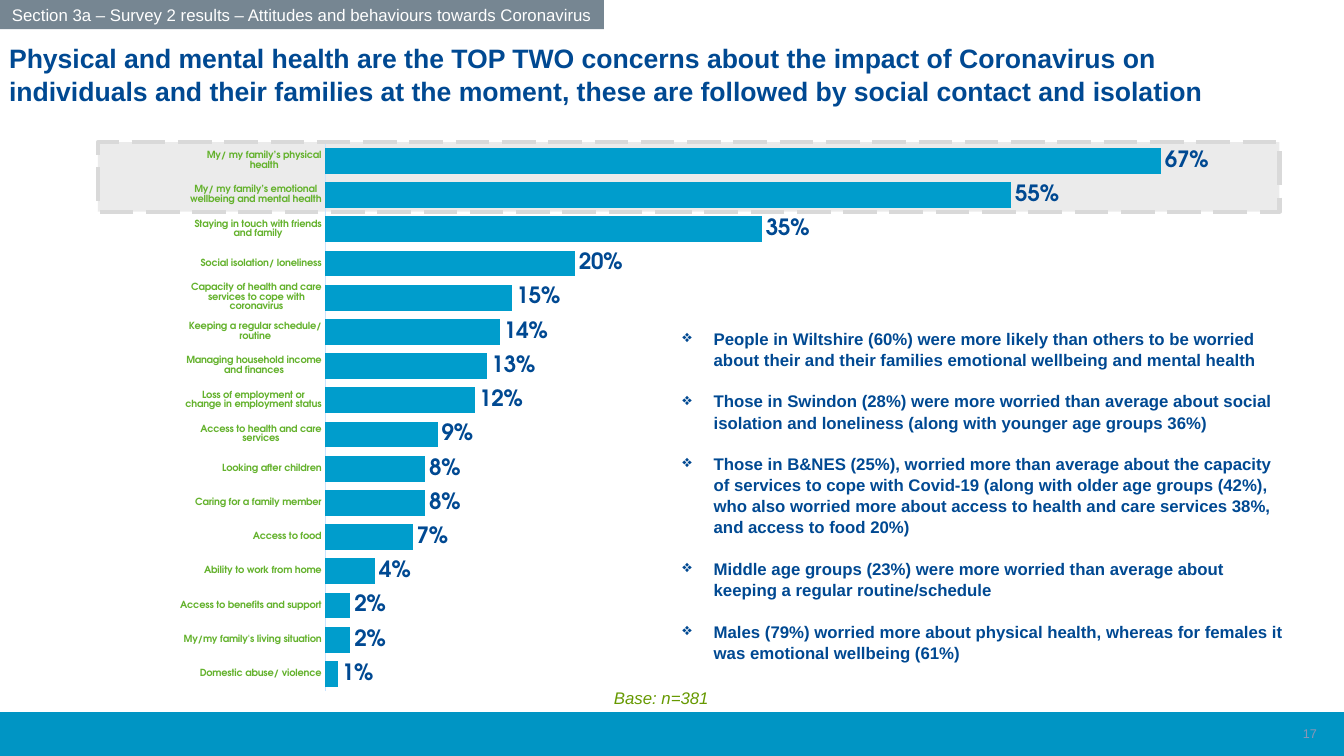
from lxml import etree
from pptx import Presentation
from pptx.chart.data import CategoryChartData
from pptx.dml.color import RGBColor
from pptx.enum.chart import XL_CHART_TYPE, XL_LABEL_POSITION, XL_TICK_MARK
from pptx.enum.dml import MSO_LINE
from pptx.enum.shapes import MSO_SHAPE
from pptx.enum.text import MSO_ANCHOR, MSO_AUTO_SIZE, PP_ALIGN
from pptx.oxml.ns import qn
from pptx.util import Inches, Pt

RECTANGLE = MSO_SHAPE.RECTANGLE
LONG_DASH = MSO_LINE.LONG_DASH
BAR_CLUSTERED = XL_CHART_TYPE.BAR_CLUSTERED
OUTSIDE_END = XL_LABEL_POSITION.OUTSIDE_END
NO_TICK = XL_TICK_MARK.NONE
TOP, MIDDLE = MSO_ANCHOR.TOP, MSO_ANCHOR.MIDDLE
LEFT, CENTER, RIGHT = PP_ALIGN.LEFT, PP_ALIGN.CENTER, PP_ALIGN.RIGHT
NO_AUTOFIT = MSO_AUTO_SIZE.NONE

NAVY = RGBColor(0x00, 0x49, 0x92)
BAR_BLUE = RGBColor(0x00, 0x9D, 0xCC)
FOOTER_BLUE = RGBColor(0x00, 0x95, 0xC4)
AXIS_BLUE = RGBColor(0xC8, 0xE4, 0xFF)
LABEL_GREEN = RGBColor(0x64, 0xB2, 0x2D)
BASE_GREEN = RGBColor(0x66, 0x99, 0x00)
SLATE = RGBColor(0x76, 0x86, 0x92)
LIGHT_GREY = RGBColor(0xD9, 0xD9, 0xD9)
NUMBER_GREY = RGBColor(0x8C, 0x95, 0xB6)
WHITE = RGBColor(0xFF, 0xFF, 0xFF)

BODY_FONT = "Arial"
CHART_FONT = "TeX Gyre Adventor"
LINE_SPACING = 1.05

SECTION = "Section 3a – Survey 2 results – Attitudes and behaviours towards Coronavirus"
HEADLINE = (
    "Physical and mental health are the TOP TWO concerns about the impact of Coronavirus on "
    "individuals and their families at the moment, these are followed by social contact and isolation"
)
CONCERNS = [
    ("Domestic abuse/ violence", 0.01),
    ("My/my family's living situation", 0.02),
    ("Access to benefits and support", 0.02),
    ("Ability to work from home", 0.04),
    ("Access to food", 0.07),
    ("Caring for a family member", 0.08),
    ("Looking after children", 0.08),
    ("Access to health and care\nservices", 0.09),
    ("Loss of employment or\nchange in employment status", 0.12),
    ("Managing household income\nand finances", 0.13),
    ("Keeping a regular schedule/\nroutine", 0.14),
    ("Capacity of health and care\nservices to cope with\ncoronavirus", 0.15),
    ("Social isolation/ loneliness", 0.2),
    ("Staying in touch with friends\nand family", 0.35),
    ("My/ my family’s emotional\nwellbeing and mental health", 0.55),
    ("My/ my family’s physical\nhealth", 0.67),
]
FINDINGS = [
    "People in Wiltshire (60%) were more likely than others to be worried about their and their "
    "families emotional wellbeing and mental health",
    "Those in Swindon (28%) were more worried than average about social isolation and loneliness "
    "(along with younger age groups 36%)",
    "Those in B&NES (25%), worried more than average about the capacity of services to cope with "
    "Covid-19 (along with older age groups (42%), who also worried more about access to health and "
    "care services 38%, and access to food 20%)",
    "Middle age groups (23%) were more worried than average about keeping a regular routine/schedule",
    "Males (79%) worried more about physical health, whereas for females it was emotional wellbeing (61%)",
]


def inches(*lengths):
    return [Inches(length) for length in lengths]


def set_font(font, size, color, bold=False, italic=False, name=BODY_FONT):
    font.name, font.size = name, Pt(size)
    font.bold, font.italic = bold, italic
    font.color.rgb = color


def write(frame, text, size, color, align=LEFT, **style):
    frame.text = text
    para = frame.paragraphs[0]
    para.alignment = align
    set_font(para.runs[0].font, size, color, **style)


def add_rectangle(page, box, color):
    shape = page.shapes.add_shape(RECTANGLE, *inches(*box))
    shape.shadow.inherit = False
    shape.fill.solid()
    shape.fill.fore_color.rgb = color
    shape.line.fill.background()
    return shape


def add_title(page, box):
    title = page.shapes.title
    title.left, title.top, title.width, title.height = inches(*box)
    frame = title.text_frame
    frame.auto_size, frame.vertical_anchor = NO_AUTOFIT, TOP
    frame.margin_left = frame.margin_right = Inches(0.24)
    write(frame, HEADLINE, 19, NAVY, bold=True)
    frame.paragraphs[0].line_spacing = LINE_SPACING


def add_section_tab(page, box):
    frame = add_rectangle(page, box, SLATE).text_frame
    frame.vertical_anchor = MIDDLE
    write(frame, SECTION, 12, WHITE, CENTER)


def add_footer(page, box):
    left, top, width, height = box
    bar = add_rectangle(page, box, FOOTER_BLUE)
    bar.line.color.rgb = FOOTER_BLUE
    bar.line.width = Pt(1)
    number = page.shapes.add_textbox(*inches(left + width - 3.17, top + 0.01, 3, 0.4))
    number.text_frame.vertical_anchor = MIDDLE
    write(number.text_frame, "17", 9, NUMBER_GREY, RIGHT)


def add_top_two_highlight(page, box):
    band = add_rectangle(page, box, LIGHT_GREY)
    color = band.element.spPr.find(qn("a:solidFill"))[0]
    etree.SubElement(color, qn("a:alpha"), val="50000")
    band.line.color.rgb = LIGHT_GREY
    band.line.width = Pt(3)
    band.line.dash_style = LONG_DASH


def place_plot(chart, x, y, w, h):
    """Fix the inner plot area, given as fractions of the chart."""
    area = chart.element.find(".//" + qn("c:plotArea"))
    for layout in area.findall(qn("c:layout")):
        area.remove(layout)
    layout = etree.Element(qn("c:layout"))
    area.insert(0, layout)
    manual = etree.SubElement(layout, qn("c:manualLayout"))
    settings = dict(layoutTarget="inner", xMode="edge", yMode="edge", x=x, y=y, w=w, h=h)
    for tag, value in settings.items():
        etree.SubElement(manual, qn("c:" + tag), val=str(value))


def add_concern_chart(page, box):
    data = CategoryChartData(number_format="0%")
    data.categories = [concern for concern, share in CONCERNS]
    data.add_series("Series 1", [share for concern, share in CONCERNS])
    chart = page.shapes.add_chart(BAR_CLUSTERED, *inches(*box), data).chart
    chart.has_title = chart.has_legend = False
    set_font(chart.font, 10, NAVY)
    place_plot(chart, 0.176, 0.015, 0.796, 0.946)

    categories = chart.category_axis
    categories.major_tick_mark = categories.minor_tick_mark = NO_TICK
    categories.has_major_gridlines = False
    categories.format.line.color.rgb = AXIS_BLUE
    categories.format.line.width = Pt(0.75)
    set_font(categories.tick_labels.font, 7, LABEL_GREEN, bold=True, name=CHART_FONT)

    values = chart.value_axis
    values.minimum_scale, values.maximum_scale = 0, 0.8
    values.has_major_gridlines = values.visible = False

    plot = chart.plots[0]
    plot.gap_width, plot.vary_by_categories = 33, False
    bars = plot.series[0]
    bars.format.fill.solid()
    bars.format.fill.fore_color.rgb = BAR_BLUE
    labels = bars.data_labels
    labels.show_value = True
    labels.position = OUTSIDE_END
    labels.number_format, labels.number_format_is_linked = "0%", False
    set_font(labels.font, 16, NAVY, bold=True, name=CHART_FONT)


def add_base_note(page, box):
    note = page.shapes.add_textbox(*inches(*box))
    note.text_frame.word_wrap = False
    write(note.text_frame, "Base: n=381", 12, BASE_GREEN, italic=True)


def add_findings(page, box):
    frame = page.shapes.add_textbox(*inches(*box)).text_frame
    frame.word_wrap = True
    indent = Inches(0.31)
    for index, finding in enumerate(FINDINGS):
        para = frame.add_paragraph() if index else frame.paragraphs[0]
        para.text = finding
        para.line_spacing = LINE_SPACING
        if index:
            para.space_before = Pt(14.5)
        properties = para._p.get_or_add_pPr()
        properties.set("marL", str(indent))
        properties.set("indent", str(-indent))
        etree.SubElement(properties, qn("a:buChar"), char="❖")
        set_font(para.runs[0].font, 12, NAVY, bold=True)


def main():
    deck = Presentation()
    deck.slide_width, deck.slide_height = inches(13.33, 7.5)
    page = deck.slides.add_slide(deck.slide_layouts[5])
    add_footer(page, (0, 7.07, 13.33, 0.43))
    add_top_two_highlight(page, (0.97, 1.41, 11.72, 0.69))
    add_concern_chart(page, (1.04, 1.34, 12.43, 5.74))
    add_title(page, (-0.15, 0.35, 12.59, 1.09))
    add_section_tab(page, (0, 0, 5.99, 0.29))
    add_base_note(page, (5.99, 6.77, 1.15, 0.3))
    add_findings(page, (6.67, 3.2, 6.18, 3.33))
    deck.save("out.pptx")


if __name__ == "__main__":
    main()
